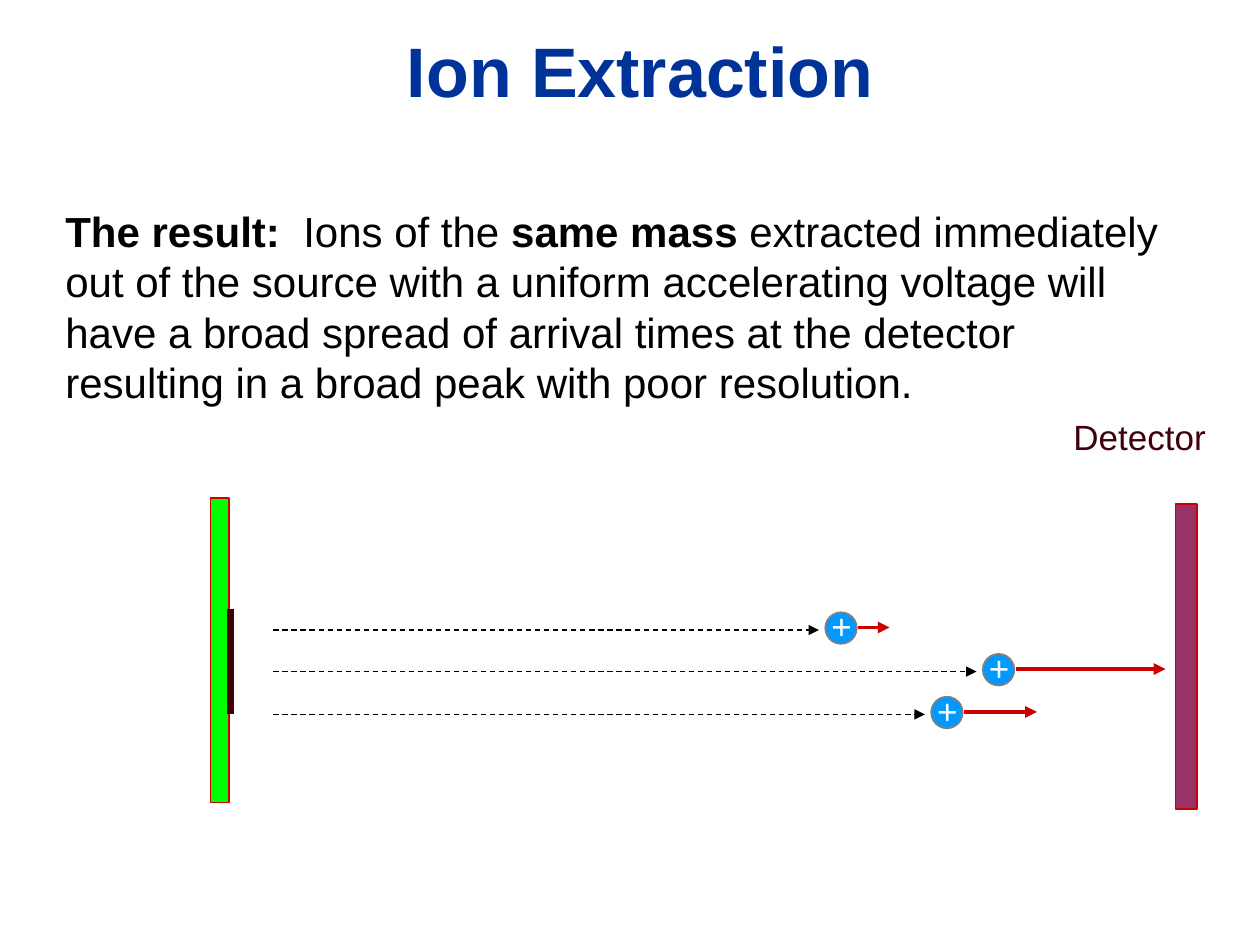
import pptx
import pptx.util
import pptx.dml.color
import pptx.enum.dml
import pptx.enum.shapes
import pptx.enum.text
import pptx.oxml.ns
from dataclasses import dataclass
from lxml import etree

Inches = pptx.util.Inches
Pt = pptx.util.Pt
Shape = pptx.enum.shapes.MSO_SHAPE


@dataclass(frozen=True)
class Theme:
    font: str = "Arial"
    title_size: int = 40
    body_size: int = 24
    label_size: int = 20
    title: str = "003399"
    ink: str = "000000"
    white: str = "FFFFFF"
    ion: str = "0099FF"
    ion_edge: str = "808080"
    red: str = "CC0000"
    detector: str = "993366"
    source: str = "00FF00"
    sample: str = "3F000B"


THEME = Theme()

# Per ion: height of its track, end of the track, length of its velocity arrow
IONS = [(5.00, 6.50, 0.25), (5.67, 7.34, 0.58), (5.33, 7.75, 1.19)]
TRACK_START = 2.17
ION_SIZE = 0.25


def rgb(value):
    return pptx.dml.color.RGBColor.from_string(value)


def add_text(shapes, left, top, width, height, spans, size, color,
             align=None, wrap=True, line_spacing=None):
    """Add a text box; spans is a list of (text, bold)."""
    box = shapes.add_textbox(Inches(left), Inches(top), Inches(width), Inches(height))
    box.text_frame.word_wrap = wrap
    para = box.text_frame.paragraphs[0]
    para.alignment = align
    para.line_spacing = line_spacing
    for text, bold in spans:
        span = para.add_run()
        span.text = text
        span.font.name = THEME.font
        span.font.size = Pt(size)
        span.font.bold = bold
        span.font.color.rgb = rgb(color)


def add_solid(shapes, kind, left, top, width, height, fill, edge):
    shape = shapes.add_shape(kind, Inches(left), Inches(top), Inches(width), Inches(height))
    shape.shadow.inherit = False
    shape.fill.solid()
    shape.fill.fore_color.rgb = rgb(fill)
    shape.line.color.rgb = rgb(edge)
    shape.line.width = Pt(1)


def add_line(shapes, start, end, color, width, arrow=False, dashed=False):
    line = shapes.add_connector(pptx.enum.shapes.MSO_CONNECTOR.STRAIGHT,
                                *(Inches(value) for value in (*start, *end)))
    line.line.color.rgb = rgb(color)
    line.line.width = Pt(width)
    if dashed:
        line.line.dash_style = pptx.enum.dml.MSO_LINE.DASH
    if arrow:
        etree.SubElement(line.line._get_or_add_ln(),
                         pptx.oxml.ns.qn("a:tailEnd"), type="triangle")
    etree.SubElement(line._element.spPr, pptx.oxml.ns.qn("a:effectLst"))


def add_ion(page, track, track_end, speed):
    """Add a charged ion at the end of its track, with its velocity arrow."""
    shapes = page.shapes.add_group_shape().shapes
    left, top = track_end + 0.05, track - 0.14
    add_solid(shapes, Shape.OVAL, left, top, ION_SIZE, ION_SIZE, THEME.ion, THEME.ion_edge)
    add_text(shapes, left - 0.05, top - 0.11, 0.33, 0.43, [("+", False)],
             THEME.label_size, THEME.white)
    tip, middle = left + ION_SIZE + 0.01, track - 0.02
    add_line(shapes, (tip, middle), (tip + speed, middle), THEME.red, 2.25, arrow=True)


def main():
    deck = pptx.Presentation()
    deck.slide_width, deck.slide_height = Inches(10), Inches(7.5)
    page = deck.slides.add_slide(deck.slide_layouts[6])
    shapes = page.shapes

    # Ions in flight
    for track, track_end, speed in IONS:
        add_ion(page, track, track_end, speed)

    # Explanation and title
    add_text(shapes, 0.42, 1.58, 9.08, 1.7, [
        ("The result:", True),
        ("  Ions of the ", False),
        ("same mass", True),
        (" extracted immediately out of the source with a uniform accelerating "
         "voltage will have a broad spread of arrival times at the detector "
         "resulting in a broad peak with poor resolution.", False),
    ], THEME.body_size, THEME.ink, line_spacing=Pt(28.8))
    add_text(shapes, 1.08, 0.17, 8, 0.77, [("Ion Extraction", True)],
             THEME.title_size, THEME.title, align=pptx.enum.text.PP_ALIGN.CENTER)

    # Detector
    add_solid(shapes, Shape.RECTANGLE, 9.33, 4, 0.17, 2.42, THEME.detector, THEME.red)
    add_text(shapes, 8.42, 3.25, 1.25, 0.43, [("Detector", False)],
             THEME.label_size, THEME.sample, wrap=False)

    # Source plate with its sample
    add_solid(shapes, Shape.RECTANGLE, 1.67, 3.95, 0.15, 2.42, THEME.source, THEME.red)
    add_line(shapes, (1.83, 4.83), (1.83, 5.67), THEME.sample, 4)

    # Flight tracks
    for track, track_end, _ in IONS:
        add_line(shapes, (TRACK_START, track), (track_end, track), THEME.ink, 0.75,
                 arrow=True, dashed=True)

    deck.save("out.pptx")


if __name__ == "__main__":
    main()
